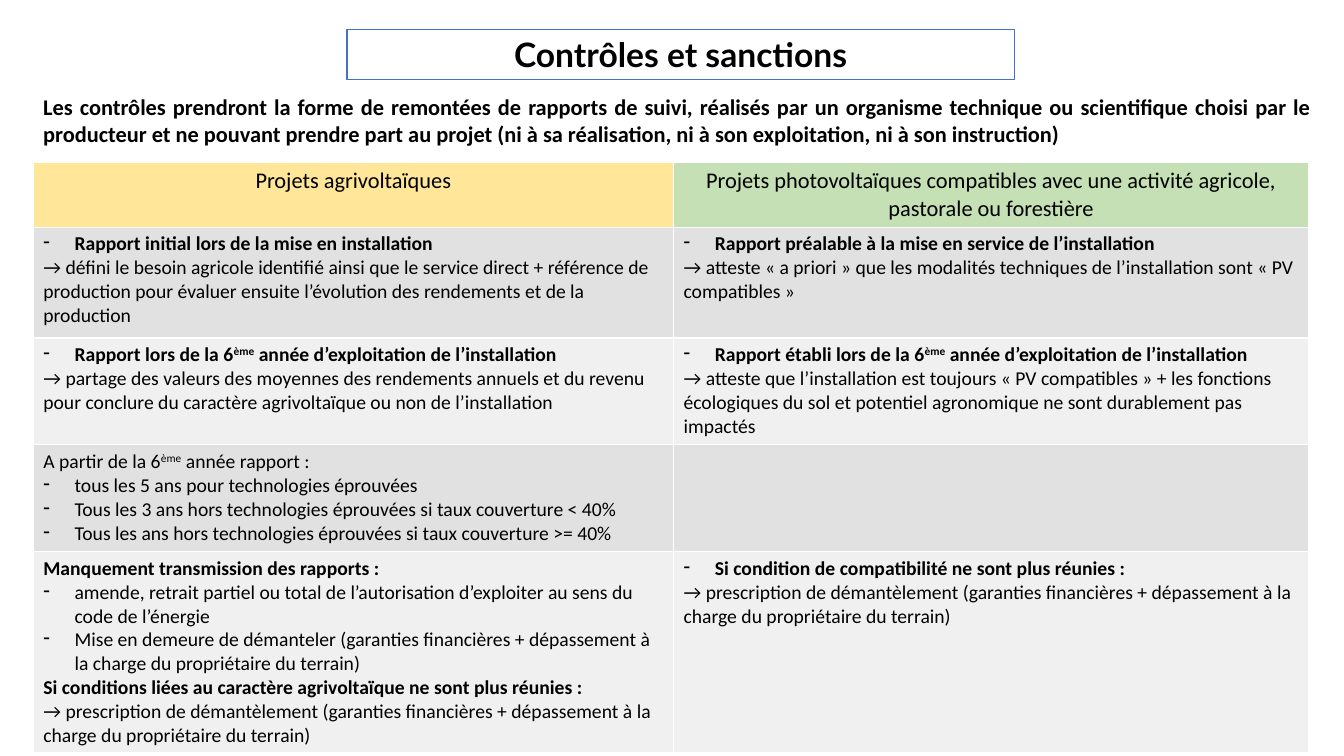
from dataclasses import dataclass

from pptx import Presentation
from pptx.dml.color import RGBColor
from pptx.enum.text import MSO_ANCHOR, MSO_AUTO_SIZE, PP_ALIGN
from pptx.oxml.xmlchemy import OxmlElement
from pptx.text.text import TextFrame, _Paragraph
from pptx.util import Emu, Pt

EMU_PER_PX = 9144  # 100 px to the inch


def px(length: int) -> Emu:
    return Emu(length * EMU_PER_PX)


@dataclass(frozen=True)
class Theme:
    ink: RGBColor = RGBColor(0x00, 0x00, 0x00)
    paper: RGBColor = RGBColor(0xFF, 0xFF, 0xFF)
    frame: RGBColor = RGBColor(0x44, 0x72, 0xC4)
    agrivoltaic: RGBColor = RGBColor(0xFF, 0xE6, 0x99)
    compatible: RGBColor = RGBColor(0xC5, 0xE0, 0xB4)
    dark_band: RGBColor = RGBColor(0xE1, 0xE1, 0xE1)
    light_band: RGBColor = RGBColor(0xF0, 0xF0, 0xF0)
    title_font: str = "Lato"
    text_font: str = "Calibri"
    title_size: int = 24
    heading_size: int = 16
    cell_size: int = 14


THEME = Theme()
HANGING_INDENT = 31


@dataclass(frozen=True)
class Line:
    """One paragraph; text between carets is superscript."""
    text: str
    bold: bool = False
    dash: bool = False


@dataclass(frozen=True)
class Box:
    left: int
    top: int
    width: int
    height: int


TITLE_BOX = Box(344, 29, 662, 50)
INTRO_BOX = Box(33, 88, 1278, 64)
TABLE_BOX = Box(33, 161, 1265, 506)
COLUMN_WIDTHS = (635, 630)
ROW_HEIGHTS = (64, 110, 106, 106, 120)

INTRO = (
    "Les contrôles prendront la forme de remontées de rapports de suivi, réalisés par un "
    "organisme technique ou scientifique choisi par le producteur et ne pouvant prendre part "
    "au projet (ni à sa réalisation, ni à son exploitation, ni à son instruction)"
)
HEADINGS = (
    ("Projets agrivoltaïques", THEME.agrivoltaic),
    ("Projets photovoltaïques compatibles avec une activité agricole, pastorale ou forestière",
     THEME.compatible),
)
DISMANTLING = Line(
    "→ prescription de démantèlement (garanties financières + dépassement à la charge du "
    "propriétaire du terrain)"
)
CONTROLS: tuple[tuple[list[Line], list[Line]], ...] = (
    (
        [Line("Rapport initial lors de la mise en installation", bold=True, dash=True),
         Line("→ défini le besoin agricole identifié ainsi que le service direct + référence de "
              "production pour évaluer ensuite l’évolution des rendements et de la production")],
        [Line("Rapport préalable à la mise en service de l’installation", bold=True, dash=True),
         Line("→ atteste « a priori » que les modalités techniques de l’installation sont "
              "« PV compatibles »")],
    ),
    (
        [Line("Rapport lors de la 6^ème^ année d’exploitation de l’installation",
              bold=True, dash=True),
         Line("→ partage des valeurs des moyennes des rendements annuels et du revenu pour "
              "conclure du caractère agrivoltaïque ou non de l’installation")],
        [Line("Rapport établi lors de la 6^ème^ année d’exploitation de l’installation",
              bold=True, dash=True),
         Line("→ atteste que l’installation est toujours « PV compatibles » + les fonctions "
              "écologiques du sol et potentiel agronomique ne sont durablement pas impactés")],
    ),
    (
        [Line("A partir de la 6^ème^ année rapport :"),
         Line("tous les 5 ans pour technologies éprouvées", dash=True),
         Line("Tous les 3 ans hors technologies éprouvées si taux couverture < 40%", dash=True),
         Line("Tous les ans hors technologies éprouvées si taux couverture >= 40%", dash=True)],
        [],
    ),
    (
        [Line("Manquement transmission des rapports :", bold=True),
         Line("amende, retrait partiel ou total de l’autorisation d’exploiter au sens du code "
              "de l’énergie", dash=True),
         Line("Mise en demeure de démanteler (garanties financières + dépassement à la charge "
              "du propriétaire du terrain)", dash=True),
         Line("Si conditions liées au caractère agrivoltaïque ne sont plus réunies :", bold=True),
         DISMANTLING],
        [Line("Si condition de compatibilité ne sont plus réunies :", bold=True, dash=True),
         DISMANTLING],
    ),
)


def add_dash(paragraph: _Paragraph) -> None:
    properties = paragraph._p.get_or_add_pPr()
    properties.set("marL", str(px(HANGING_INDENT)))
    properties.set("indent", str(-px(HANGING_INDENT)))
    bullet = OxmlElement("a:buChar")
    bullet.set("char", "-")
    properties.append(bullet)


def write(frame: TextFrame, lines: list[Line], *, size: int, font: str = THEME.text_font,
          align: PP_ALIGN = PP_ALIGN.LEFT) -> None:
    for index, line in enumerate(lines):
        paragraph = frame.add_paragraph() if index else frame.paragraphs[0]
        paragraph.alignment = align
        if line.dash:
            add_dash(paragraph)
        for part_index, part in enumerate(line.text.split("^")):
            run = paragraph.add_run()
            run.text = part
            run.font.name = font
            run.font.size = Pt(size)
            run.font.bold = line.bold
            run.font.color.rgb = THEME.ink
            if part_index % 2:
                run._r.get_or_add_rPr().set("baseline", "30000")


def place(box: Box) -> tuple[Emu, Emu, Emu, Emu]:
    return px(box.left), px(box.top), px(box.width), px(box.height)


def add_title(slide) -> None:
    title = slide.shapes.title
    title.left, title.top, title.width, title.height = place(TITLE_BOX)
    title.fill.solid()
    title.fill.fore_color.rgb = THEME.paper
    title.line.color.rgb = THEME.frame
    title.line.width = Pt(1)
    title.text_frame.auto_size = MSO_AUTO_SIZE.NONE
    title.text_frame.vertical_anchor = MSO_ANCHOR.TOP
    write(title.text_frame, [Line("Contrôles et sanctions", bold=True)],
          size=THEME.title_size, font=THEME.title_font, align=PP_ALIGN.CENTER)


def add_intro(slide) -> None:
    intro = slide.shapes.add_textbox(*place(INTRO_BOX)).text_frame
    intro.word_wrap = True
    write(intro, [Line(INTRO, bold=True)], size=THEME.heading_size, align=PP_ALIGN.JUSTIFY)


def add_controls(slide) -> None:
    controls = slide.shapes.add_table(
        len(ROW_HEIGHTS), len(COLUMN_WIDTHS), *place(TABLE_BOX)).table
    for column, width in zip(controls.columns, COLUMN_WIDTHS):
        column.width = px(width)
    for row, height in zip(controls.rows, ROW_HEIGHTS):
        row.height = px(height)

    for column_index, (heading, colour) in enumerate(HEADINGS):
        cell = controls.cell(0, column_index)
        cell.fill.solid()
        cell.fill.fore_color.rgb = colour
        write(cell.text_frame, [Line(heading)], size=THEME.heading_size, align=PP_ALIGN.CENTER)

    for row_index, project_rules in enumerate(CONTROLS, start=1):
        for column_index, lines in enumerate(project_rules):
            cell = controls.cell(row_index, column_index)
            cell.fill.solid()
            cell.fill.fore_color.rgb = THEME.dark_band if row_index % 2 else THEME.light_band
            write(cell.text_frame, lines, size=THEME.cell_size)


def main() -> None:
    presentation = Presentation()
    presentation.slide_width, presentation.slide_height = px(1333), px(750)
    title_only = presentation.slide_layouts[5]
    slide = presentation.slides.add_slide(title_only)
    add_controls(slide)
    add_title(slide)
    add_intro(slide)
    presentation.save("out.pptx")


if __name__ == "__main__":
    main()
